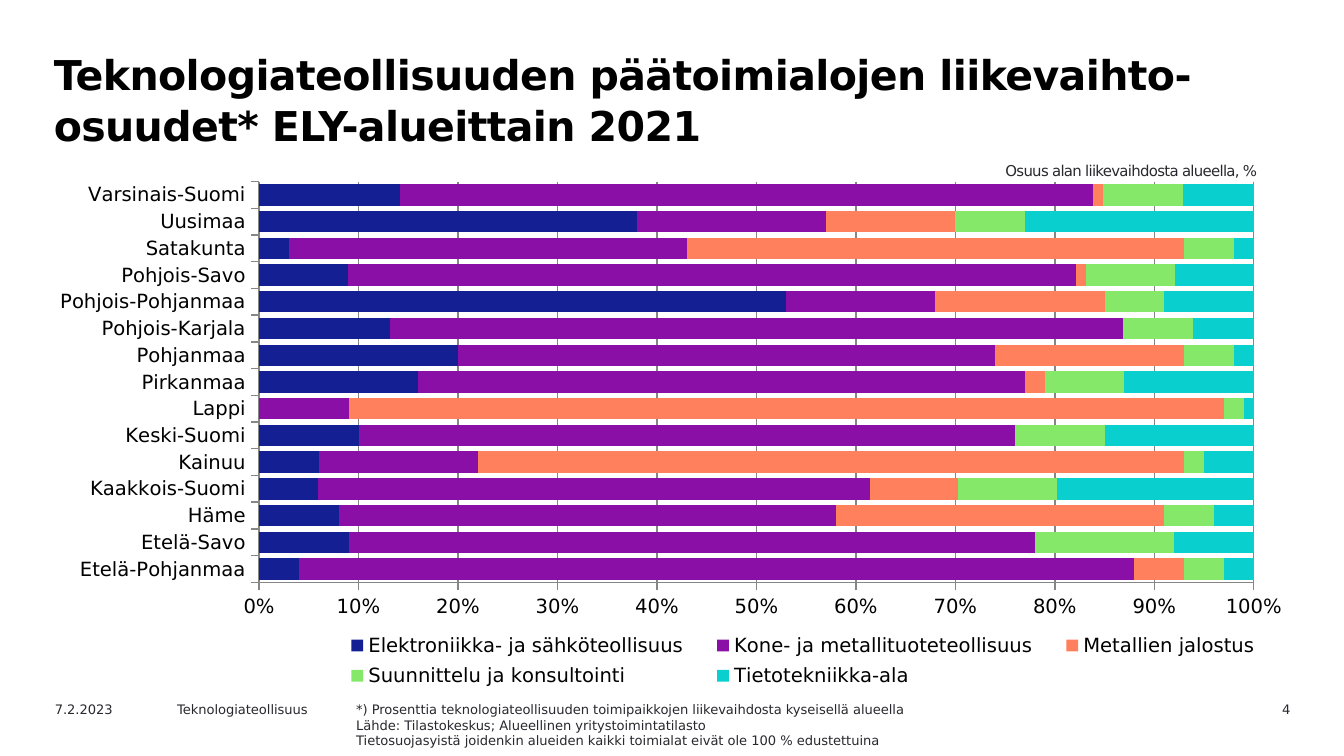
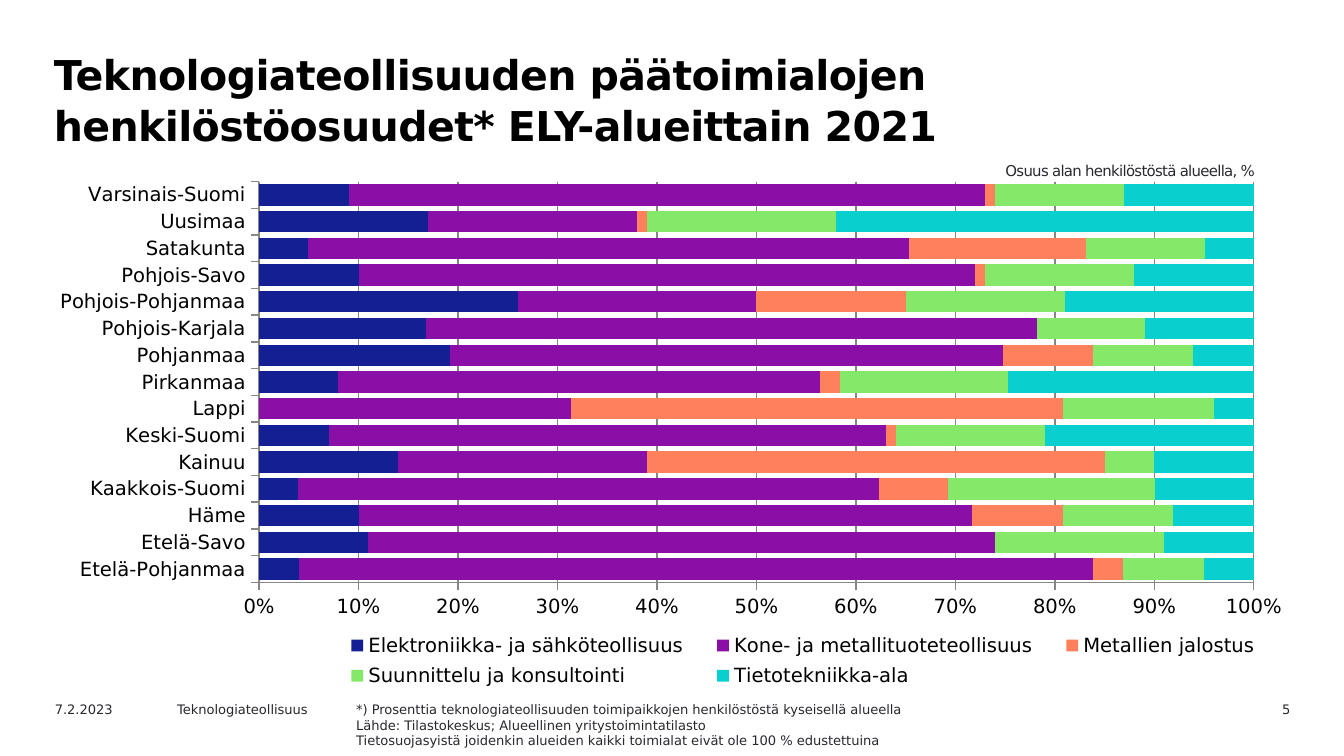
from dataclasses import dataclass

from lxml import etree
from pptx import Presentation
from pptx.chart.data import CategoryChartData
from pptx.dml.color import RGBColor
from pptx.enum.chart import XL_CHART_TYPE as ChartType
from pptx.enum.chart import XL_LEGEND_POSITION as LegendPos
from pptx.enum.chart import XL_TICK_MARK as TickMark
from pptx.enum.text import MSO_ANCHOR as Anchor
from pptx.enum.text import MSO_AUTO_SIZE as AutoSize
from pptx.enum.text import PP_ALIGN as Align
from pptx.oxml.ns import qn
from pptx.util import Pt


@dataclass(frozen=True)
class Theme:
    font: str = "DejaVu Sans"
    black: str = "000000"
    text: str = "29282E"
    axis: str = "868686"
    title_size: float = 22
    chart_size: float = 12
    axis_size: float = 10.5
    unit_size: float = 8
    footer_size: float = 7


THEME = Theme()

# Shared geometry, in points: left, top, width, height
TITLE_BOX = (20.2, 22.3, 629.3, 51.1)
CHART_BOX = (18.7, 91.4, 674.6, 280.8)
UNIT_BOX = (535.7, 83.5, 147.6, 15.1)
FOOTER_TOP, FOOTER_HEIGHT = 372.2, 13
DATE_SPAN, SECTOR_SPAN = (22.3, 72), (87.8, 102.2)
NOTE_SPAN, NUMBER_SPAN = (183.6, 409), (630.7, 67.7)

# Shares of the chart area: x, y, w, h
PLOT_AREA = (0.178, 0.021, 0.79, 0.765)
LEGEND_AREA = (0.23, 0.87, 0.76, 0.13)

REGIONS = (
    "Etelä-Pohjanmaa", "Etelä-Savo", "Häme", "Kaakkois-Suomi", "Kainuu",
    "Keski-Suomi", "Lappi", "Pirkanmaa", "Pohjanmaa", "Pohjois-Karjala",
    "Pohjois-Pohjanmaa", "Pohjois-Savo", "Satakunta", "Uusimaa",
    "Varsinais-Suomi",
)
INDUSTRIES = {
    "Elektroniikka- ja sähköteollisuus": "141F94",
    "Kone- ja metallituoteteollisuus": "8A0FA6",
    "Metallien jalostus": "FF805C",
    "Suunnittelu ja konsultointi": "85E869",
    "Tietotekniikka-ala": "0ACFCF",
}

# Per slide: number, title, measured quantity, one row of shares per industry
SLIDES = (
    (4, "Teknologiateollisuuden päätoimialojen liikevaihto-osuudet* "
        "ELY-alueittain 2021", "liikevaihdosta", (
            (4, 9, 8, 6, 6, 10, 0, 16, 20, 13, 53, 9, 3, 38, 14),
            (84, 69, 50, 56, 16, 66, 9, 61, 54, 73, 15, 74, 40, 19, 69),
            (5, 0, 33, 9, 71, 0, 88, 2, 19, 0, 17, 1, 50, 13, 1),
            (4, 14, 5, 10, 2, 9, 2, 8, 5, 7, 6, 9, 5, 7, 8),
            (3, 8, 4, 20, 5, 15, 1, 13, 2, 6, 9, 8, 2, 23, 7),
        )),
    (5, "Teknologiateollisuuden päätoimialojen henkilöstöosuudet* "
        "ELY-alueittain 2021", "henkilöstöstä", (
            (4, 11, 10, 4, 14, 7, 0, 8, 19, 17, 26, 10, 5, 17, 9),
            (79, 63, 61, 59, 25, 56, 31, 49, 55, 62, 24, 62, 61, 21, 64),
            (3, 0, 9, 7, 46, 1, 49, 2, 9, 0, 15, 1, 18, 1, 1),
            (8, 17, 11, 21, 5, 15, 15, 17, 10, 11, 16, 15, 12, 19, 13),
            (5, 9, 8, 10, 10, 21, 4, 25, 6, 11, 19, 12, 5, 42, 13),
        )),
)


def apply(target, formats):
    for name, value in formats.items():
        setattr(target, name, value)


def set_font(font, size, color, bold=False):
    apply(font, {"name": THEME.font, "size": Pt(size), "bold": bold})
    font.color.rgb = RGBColor.from_string(color)


def in_points(box):
    return [Pt(length) for length in box]


def footer_box(span):
    left, width = span
    return left, FOOTER_TOP, width, FOOTER_HEIGHT


def write(holder, lines, size, color=THEME.text, bold=False, align=Align.LEFT,
          tracking=0, indent=0, leading=None, plain_list=False):
    """Fill a text holder with one paragraph per line."""
    frame = holder.text_frame
    apply(frame, {"word_wrap": True, "auto_size": AutoSize.NONE,
                  "vertical_anchor": Anchor.TOP})
    for index, line in enumerate(lines):
        paragraph = frame.paragraphs[0] if index == 0 else frame.add_paragraph()
        if plain_list or indent:
            properties = paragraph._p.get_or_add_pPr()
            properties.set("marL", str(Pt(indent)))
            properties.set("indent", "0")
            etree.SubElement(properties, qn("a:buNone"))
        apply(paragraph, {"alignment": align, "space_before": Pt(0)})
        if leading:
            paragraph.line_spacing = Pt(leading)
        run = paragraph.add_run()
        run.text = line
        set_font(run.font, size, color, bold)
        if tracking:
            run._r.get_or_add_rPr().set("spc", str(round(tracking * 100)))


def place(holder, box):
    apply(holder, dict(zip(("left", "top", "width", "height"), in_points(box))))
    return holder


def add_label(slide, box, text, size, inset=None, **style):
    label = slide.shapes.add_textbox(*in_points(box))
    if inset is not None:
        sides = ("left", "top", "right", "bottom")
        apply(label.text_frame, {f"margin_{side}": Pt(inset) for side in sides})
    write(label, [text], size, **style)


def manual_layout(area, inner=False):
    layout = etree.Element(qn("c:layout"))
    manual = etree.SubElement(layout, qn("c:manualLayout"))
    values = [("layoutTarget", "inner")] if inner else []
    values += [("xMode", "edge"), ("yMode", "edge")]
    values += zip("xywh", area)
    for tag, value in values:
        etree.SubElement(manual, qn(f"c:{tag}")).set("val", str(value))
    return layout


def drop_layout(parent):
    for layout in parent.findall(qn("c:layout")):
        parent.remove(layout)


def style_axis(axis):
    apply(axis, {"major_tick_mark": TickMark.OUTSIDE,
                 "minor_tick_mark": TickMark.NONE})
    set_font(axis.tick_labels.font, THEME.axis_size, THEME.black)
    style_line(axis.format.line)


def style_line(line):
    line.color.rgb = RGBColor.from_string(THEME.axis)
    line.width = Pt(0.75)


def add_share_chart(slide, shares):
    data = CategoryChartData()
    data.categories = REGIONS
    for industry, values in zip(INDUSTRIES, shares):
        data.add_series(industry, values)
    chart = slide.shapes.add_chart(
        ChartType.BAR_STACKED_100, *in_points(CHART_BOX), data).chart
    apply(chart, {"has_title": False, "has_legend": True})
    set_font(chart.font, THEME.chart_size, THEME.text)

    # Bars
    plot = chart.plots[0]
    apply(plot, {"gap_width": 25, "overlap": 100, "vary_by_categories": False})
    for series, color in zip(plot.series, INDUSTRIES.values()):
        series.format.fill.solid()
        series.format.fill.fore_color.rgb = RGBColor.from_string(color)
        series.invert_if_negative = False

    # Axes
    shares_axis = chart.value_axis
    for axis in (chart.category_axis, shares_axis):
        style_axis(axis)
    shares_axis.has_major_gridlines = True
    style_line(shares_axis.major_gridlines.format.line)
    apply(shares_axis.tick_labels,
          {"number_format": "0%", "number_format_is_linked": False})

    # Legend and plot placement
    legend = chart.legend
    apply(legend, {"position": LegendPos.BOTTOM, "include_in_layout": True})
    set_font(legend.font, THEME.axis_size, THEME.black)
    drop_layout(legend._element)
    legend._element.find(qn("c:overlay")).addprevious(manual_layout(LEGEND_AREA))
    plot_area = chart._chartSpace.find(f".//{qn('c:plotArea')}")
    drop_layout(plot_area)
    plot_area.insert(0, manual_layout(PLOT_AREA, inner=True))


def add_footer(slide, number, quantity):
    add_label(slide, footer_box(NUMBER_SPAN), str(number), THEME.footer_size,
              align=Align.RIGHT)
    add_label(slide, footer_box(DATE_SPAN), "7.2.2023", THEME.footer_size)
    add_label(slide, footer_box(SECTOR_SPAN), "Teknologiateollisuus",
              THEME.footer_size)
    note = place(slide.placeholders[1], footer_box(NOTE_SPAN))
    write(note, (
        f"*) Prosenttia teknologiateollisuuden toimipaikkojen {quantity} "
        "kyseisellä alueella",
        "Lähde: Tilastokeskus; Alueellinen yritystoimintatilasto",
        "Tietosuojasyistä joidenkin alueiden kaikki toimialat eivät ole 100 % "
        "edustettuina",
    ), THEME.footer_size, plain_list=True)


def add_region_slide(deck, number, title, quantity, shares):
    slide = deck.slides.add_slide(deck.slide_layouts[1])
    write(place(slide.shapes.title, TITLE_BOX), [title], THEME.title_size,
          color=THEME.black, bold=True, tracking=-0.3, indent=1.4, leading=27)
    add_footer(slide, number, quantity)
    add_share_chart(slide, shares)
    add_label(slide, UNIT_BOX, f"Osuus alan {quantity} alueella, %",
              THEME.unit_size, inset=2.9, tracking=-0.4)


def main():
    deck = Presentation()
    apply(deck, {"slide_width": Pt(720), "slide_height": Pt(405)})
    for content in SLIDES:
        add_region_slide(deck, *content)
    deck.save("out.pptx")


if __name__ == "__main__":
    main()
